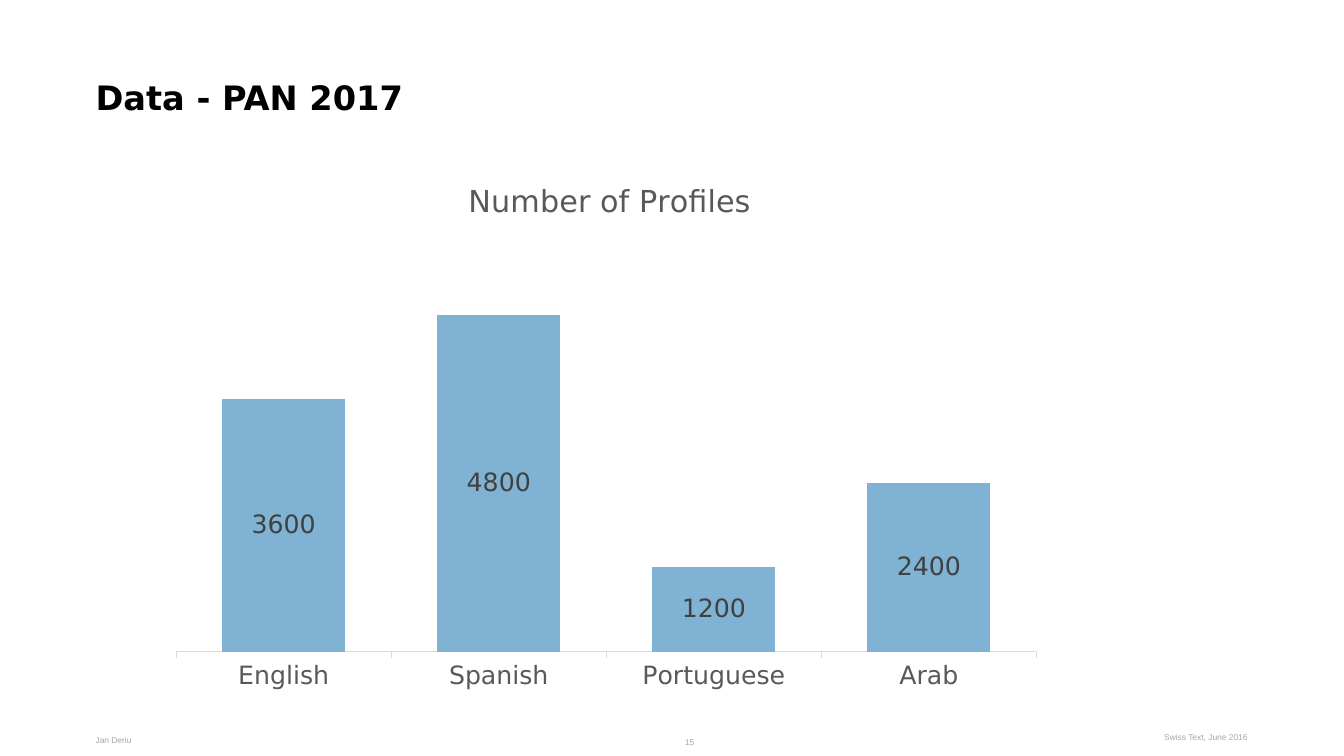
from dataclasses import dataclass

from lxml import etree
from pptx import Presentation
from pptx.chart.data import CategoryChartData
from pptx.dml.color import RGBColor
from pptx.enum.chart import XL_CHART_TYPE as ChartType
from pptx.enum.chart import XL_LABEL_POSITION as LabelPos
from pptx.enum.chart import XL_TICK_LABEL_POSITION as TickLabelPos
from pptx.enum.chart import XL_TICK_MARK as TickMark
from pptx.enum.text import PP_ALIGN as Align
from pptx.oxml.ns import qn
from pptx.util import Cm, Pt


@dataclass(frozen=True)
class Theme:
    heading_font: str = "DejaVu Sans"
    footer_font: str = "Arial"
    black: str = "000000"
    bar: str = "80B2D3"
    label: str = "404040"
    axis_text: str = "595959"
    axis_line: str = "D9D9D9"
    footer: str = "A6A6A6"
    title_size: float = 24
    chart_title_size: float = 21.6
    chart_size: float = 18
    footer_size: float = 6


THEME = Theme()
PROFILES = {"English": 3600, "Spanish": 4800, "Portuguese": 1200, "Arab": 2400}


def style_font(font, name, size, color, bold=False):
    values = {"name": name, "size": Pt(size), "bold": bold}
    for key, value in values.items():
        setattr(font, key, value)
    font.color.rgb = RGBColor.from_string(color)


def add_text(slide, box, text, font_format, align=Align.LEFT, margin=0):
    """Place one line of text; box is left, top, width, height in cm."""
    tf = slide.shapes.add_textbox(*map(Cm, box)).text_frame
    tf.word_wrap = True
    for side in ("left", "top", "right", "bottom"):
        setattr(tf, f"margin_{side}", Cm(margin))
    p = tf.paragraphs[0]
    p.alignment = align
    r = p.add_run()
    r.text = text
    style_font(r.font, *font_format)


def set_layout(parent, before, **fractions):
    """Pin a chart part to fractions of the chart area, ahead of the tag named."""
    for old in parent.findall(qn("c:layout")):
        parent.remove(old)
    layout = etree.Element(qn("c:layout"))
    manual = etree.SubElement(layout, qn("c:manualLayout"))
    values = {"xMode": "edge", "yMode": "edge", **fractions}
    if "w" in fractions:
        values = {"layoutTarget": "inner", **values}
    for tag, value in values.items():
        etree.SubElement(manual, qn(f"c:{tag}")).set("val", str(value))
    parent.find(qn(before)).addprevious(layout)


def add_profile_chart(slide, box):
    data = CategoryChartData()
    data.categories = list(PROFILES)
    data.add_series("Series 1", list(PROFILES.values()))
    chart = slide.shapes.add_chart(
        ChartType.COLUMN_STACKED, *map(Cm, box), data).chart
    font = THEME.heading_font
    style_font(chart.font, font, THEME.chart_size, THEME.black)
    chart.has_legend = False

    chart.has_title = True
    p = chart.chart_title.text_frame.paragraphs[0]
    r = p.add_run()
    r.text = "Number of Profiles"
    style_font(r.font, font, THEME.chart_title_size, THEME.axis_text)
    title = chart.chart_title._element
    set_layout(title, "c:overlay", x=0.34, y=0.05)

    plot = chart.plots[0]
    for key, value in {"gap_width": 75, "overlap": 100,
                       "vary_by_categories": False}.items():
        setattr(plot, key, value)
    set_layout(chart._chartSpace.chart.plotArea, "c:barChart",
               x=0.02, y=0.15, w=0.96, h=0.76)

    series = plot.series[0]
    series.format.fill.solid()
    series.format.fill.fore_color.rgb = RGBColor.from_string(THEME.bar)
    labels = series.data_labels
    labels.show_value = True
    labels.position = LabelPos.CENTER
    style_font(labels.font, font, THEME.chart_size, THEME.label)

    languages = chart.category_axis
    for key, value in {"major_tick_mark": TickMark.OUTSIDE,
                       "minor_tick_mark": TickMark.NONE,
                       "tick_label_position": TickLabelPos.LOW,
                       "has_major_gridlines": False}.items():
        setattr(languages, key, value)
    style_font(languages.tick_labels.font, font, THEME.chart_size, THEME.axis_text)
    line = languages.format.line
    line.width = Pt(0.75)
    line.color.rgb = RGBColor.from_string(THEME.axis_line)

    for key, value in {"minimum_scale": 0, "maximum_scale": 6000,
                       "has_major_gridlines": False, "visible": False}.items():
        setattr(chart.value_axis, key, value)


def add_footer(slide, left, top, width):
    """Author, page number and event across the foot of the slide."""
    font_format = (THEME.footer_font, THEME.footer_size, THEME.footer)
    field = 3.25
    add_text(slide, (left, top + 0.08, field, 0.6), "Jan Deriu", font_format)
    add_text(slide, (left + 11.56, top, 3.73, 0.48), "15", font_format,
             Align.RIGHT, margin=0.2)
    add_text(slide, (left + width - field, top, field, 0.6),
             "Swiss Text, June 2016", font_format, Align.RIGHT)


def build_chart_slide(prs):
    slide = prs.slides.add_slide(prs.slide_layouts[6])
    left = 2.41
    add_footer(slide, left, 18.44, 29.03)
    add_text(slide, (left, 1.93, 23.62, 2.16), "Data - PAN 2017",
             (THEME.heading_font, THEME.title_size, THEME.black, True))
    add_profile_chart(slide, (3.99, 3.71, 22.58, 13.97))


def main():
    prs = Presentation()
    prs.slide_width, prs.slide_height = Cm(33.87), Cm(19.05)
    build_chart_slide(prs)
    prs.save("out.pptx")


if __name__ == "__main__":
    main()
